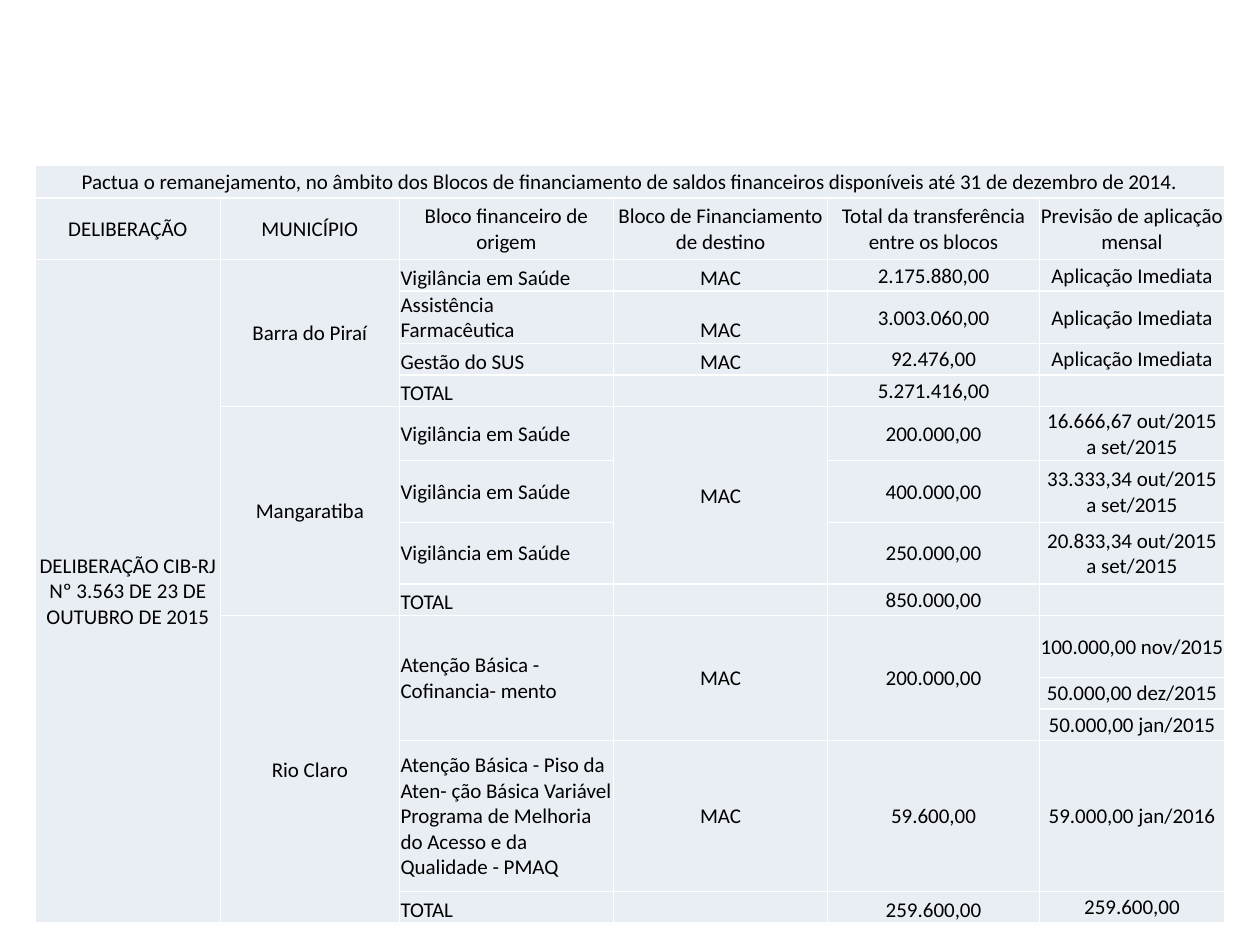
"""Build the slide with the table of fund reallocations between financing blocks."""
from dataclasses import dataclass

from lxml.etree import SubElement
from pptx import Presentation
from pptx.dml.color import RGBColor
from pptx.enum.text import MSO_ANCHOR, PP_ALIGN
from pptx.oxml.ns import qn
from pptx.table import Table, _Cell
from pptx.util import Inches, Pt

COLORS = {"cell": "E9EDF4", "border": "FFFFFF", "text": "000000"}
FONT = {"name": "Calibri", "size": Pt(12)}
MARGINS = {"margin_left": 0.01, "margin_right": 0.01, "margin_top": 0.01, "margin_bottom": 0}
COLUMN_WIDTHS = (1.47, 1.42, 1.7, 1.7, 1.68, 1.47)
ORIGIN_COLUMN = 2
FIRST_DATA_ROW = 2


@dataclass(frozen=True)
class Row:
    """Height, texts from the given column on, and columns anchored at the bottom."""
    height: float
    texts: tuple[str, ...]
    first_column: int = 0
    bottom: tuple[int, ...] = ()


@dataclass(frozen=True)
class Span:
    """A merged area of the table."""
    row: int
    column: int
    rows: int = 1
    columns: int = 1


ROWS = (
    Row(0.26, ("Pactua o remanejamento, no âmbito dos Blocos de financiamento de saldos "
               "financeiros disponíveis até 31 de dezembro de 2014.",)),
    Row(0.49, ("DELIBERAÇÃO", "MUNICÍPIO", "Bloco financeiro de origem",
               "Bloco de Financiamento de destino", "Total da transferência entre os blocos",
               "Previsão de aplicação mensal")),
    Row(0.25, ("DELIBERAÇÃO CIB-RJ Nº 3.563 DE 23 DE OUTUBRO DE 2015", "Barra do Piraí",
               "Vigilância em Saúde", "MAC", "2.175.880,00", "Aplicação Imediata"), 0, (2, 3)),
    Row(0.25, ("Assistência Farmacêutica", "MAC", "3.003.060,00", "Aplicação Imediata"), 2, (2, 3)),
    Row(0.25, ("Gestão do SUS", "MAC", "92.476,00", "Aplicação Imediata"), 2, (2, 3)),
    Row(0.25, ("TOTAL", "", "5.271.416,00"), 2, (2,)),
    Row(0.43, ("Mangaratiba", "Vigilância em Saúde", "MAC", "200.000,00",
               "16.666,67 out/2015 a set/2015"), 1),
    Row(0.49, ("Vigilância em Saúde", "", "400.000,00", "33.333,34 out/2015 a set/2015"), 2),
    Row(0.49, ("Vigilância em Saúde", "", "250.000,00", "20.833,34 out/2015 a set/2015"), 2),
    Row(0.25, ("TOTAL", "", "850.000,00"), 2, (2,)),
    Row(0.49, ("Rio Claro", "Atenção Básica - Cofinancia- mento", "MAC", "200.000,00",
               "100.000,00 nov/2015"), 1),
    Row(0.25, ("50.000,00 dez/2015",), 5),
    Row(0.25, ("50.000,00 jan/2015",), 5),
    Row(1.2, ("Atenção Básica - Piso da Aten- ção Básica Variável Programa de Melhoria "
              "do Acesso e da Qualidade - PMAQ", "MAC", "59.600,00", "59.000,00 jan/2016"), 2),
    Row(0.25, ("TOTAL", "", "259.600,00", "259.600,00"), 2, (2, 4)),
)

SPANS = (
    Span(0, 0, columns=6),
    Span(2, 0, rows=13),
    Span(2, 1, rows=4),
    Span(6, 1, rows=4),
    Span(10, 1, rows=5),
    Span(6, 3, rows=3),
    *(Span(10, column, rows=3) for column in (2, 3, 4)),
)


def add_borders(cell: _Cell) -> None:
    """Give the cell a thin line on every side."""
    properties = cell._tc.get_or_add_tcPr()
    for side in ("a:lnL", "a:lnR", "a:lnT", "a:lnB"):
        line = SubElement(properties, qn(side), w=str(Pt(1)))
        line_fill = SubElement(line, qn("a:solidFill"))
        SubElement(line_fill, qn("a:srgbClr"), val=COLORS["border"])


def format_cell(cell: _Cell) -> None:
    """Set borders, fill and margins, and the size of the empty paragraph."""
    add_borders(cell)
    cell.fill.solid()
    cell.fill.fore_color.rgb = RGBColor.from_string(COLORS["cell"])
    for margin, length in MARGINS.items():
        setattr(cell, margin, Inches(length))
    paragraph = cell.text_frame.paragraphs[0]
    SubElement(paragraph._p, qn("a:endParaRPr"), sz=str(FONT["size"].centipoints))


def write_cell(cell: _Cell, text: str, align: PP_ALIGN, anchor: MSO_ANCHOR) -> None:
    """Write one formatted run into the cell."""
    cell.vertical_anchor = anchor
    paragraph = cell.text_frame.paragraphs[0]
    paragraph.alignment = align
    run = paragraph.add_run()
    run.text = text
    for attribute, setting in FONT.items():
        setattr(run.font, attribute, setting)
    run.font.color.rgb = RGBColor.from_string(COLORS["text"])


def fill_row(table: Table, index: int, row: Row) -> None:
    """Write the texts of one row."""
    table.rows[index].height = Inches(row.height)
    for column, text in enumerate(row.texts, row.first_column):
        if text:
            is_origin = column == ORIGIN_COLUMN and index >= FIRST_DATA_ROW
            align = PP_ALIGN.LEFT if is_origin else PP_ALIGN.CENTER
            anchor = MSO_ANCHOR.BOTTOM if column in row.bottom else MSO_ANCHOR.MIDDLE
            write_cell(table.cell(index, column), text, align, anchor)


def main() -> None:
    """Create the presentation and save it."""
    presentation = Presentation()
    presentation.slide_width, presentation.slide_height = Inches(10), Inches(7.5)
    slide = presentation.slides.add_slide(presentation.slide_layouts[6])
    reallocations = slide.shapes.add_table(
        len(ROWS), len(COLUMN_WIDTHS), Inches(0.28), Inches(1.31),
        Inches(sum(COLUMN_WIDTHS)), Inches(sum(row.height for row in ROWS))).table
    reallocations.first_row = reallocations.horz_banding = False
    for column, width in zip(reallocations.columns, COLUMN_WIDTHS):
        column.width = Inches(width)
    for cell in reallocations.iter_cells():
        format_cell(cell)
    for index, row in enumerate(ROWS):
        fill_row(reallocations, index, row)
    for span in SPANS:
        last_cell = reallocations.cell(span.row + span.rows - 1, span.column + span.columns - 1)
        reallocations.cell(span.row, span.column).merge(last_cell)
    presentation.save("out.pptx")


if __name__ == "__main__":
    main()
